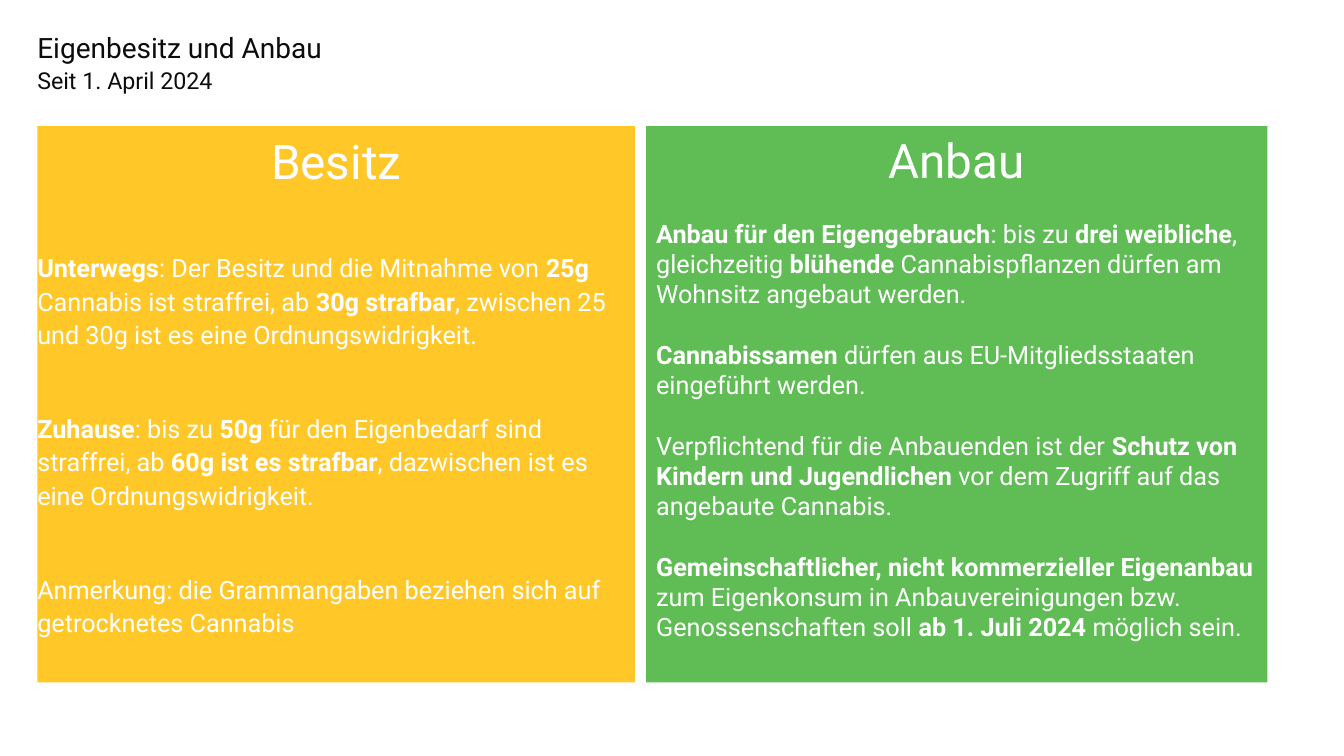
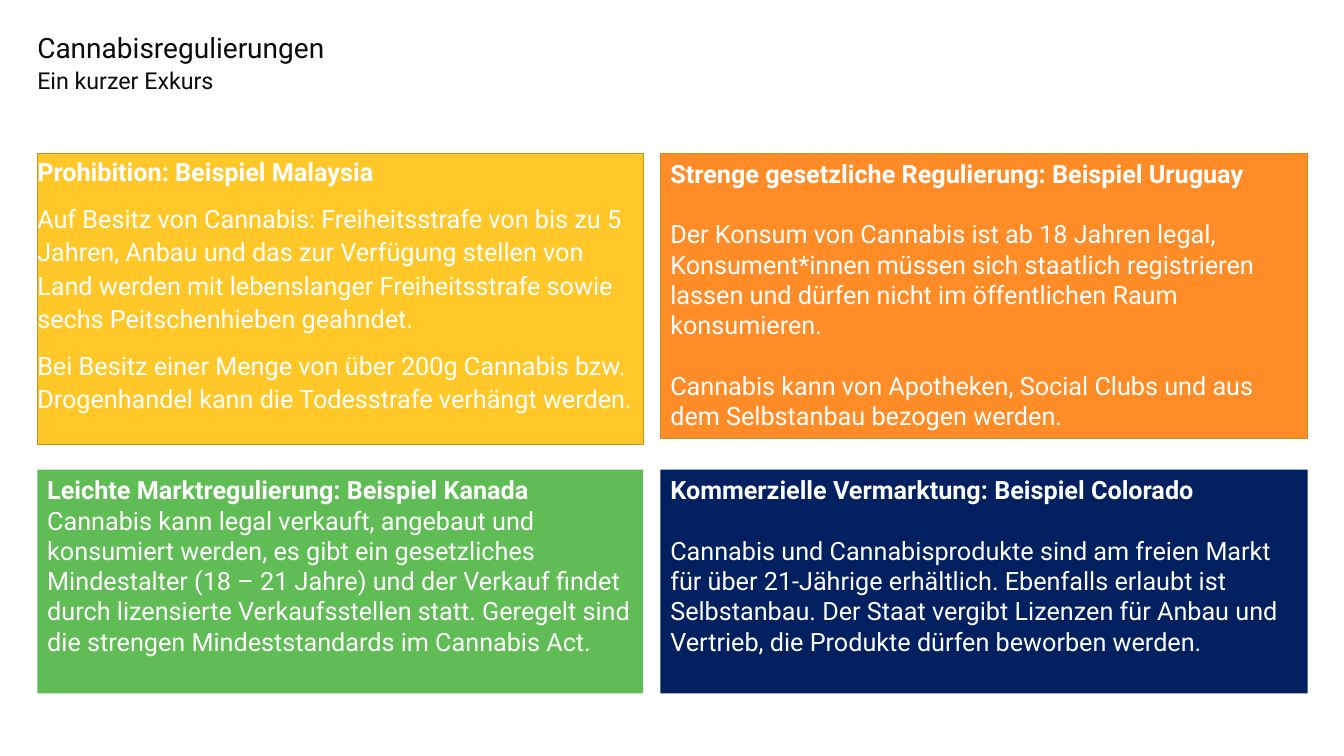
from pptx import Presentation
from pptx.dml.color import RGBColor
from pptx.enum import shapes, text
from pptx.util import Inches, Pt

FONT = "Roboto"
INK, WHITE, EDGE = "0C0C0C", "FFFFFF", "BD941E"
YELLOW, GREEN, ORANGE, NAVY = "FFC828", "60BD55", "FF8C27", "002060"
LEFT, WIDE = 0.37, 12.6

# Text styles: insets, line spacing and alignment
LOOSE = {"side": 0, "top": 0, "lead": 1.1}
PLAIN = {"side": 0.1, "top": 0.05, "lead": 1.0}
BIG = {"size": 34, "bold": False, "align": text.PP_ALIGN.CENTER}
SMALL = {"size": 18, "bold": True, "align": text.PP_ALIGN.LEFT}
LINE = 21.6  # space of one text line, in points

# Bold passages stand between bars.
SLIDES = [
    {
        "title": "Eigenbesitz und Anbau",
        "sub": "Seit 1. April 2024",
        "cards": [
            {"box": (LEFT, 1.25, 5.93, 5.52), "fill": YELLOW, "style": LOOSE,
             "head": "Besitz", "look": BIG, "gap": 43.5, "body": [
                 "|Unterwegs|: Der Besitz und die Mitnahme von |25g |Cannabis ist "
                 "straffrei, ab |30g strafbar|, zwischen 25 und 30g ist es eine "
                 "Ordnungswidrigkeit.",
                 "|Zuhause|: bis zu |50g| für den Eigenbedarf sind straffrei, ab "
                 "|60g ist es strafbar|, dazwischen ist es eine Ordnungswidrigkeit.",
                 "Anmerkung: die Grammangaben beziehen sich auf getrocknetes Cannabis"]},
            {"box": (6.41, 1.25, 6.16, 5.52), "fill": GREEN, "style": PLAIN,
             "head": "Anbau", "look": BIG, "gap": LINE, "body": [
                 "|Anbau für den Eigengebrauch|: bis zu |drei weibliche|, gleichzeitig "
                 "|blühende| Cannabispflanzen dürfen am Wohnsitz angebaut werden.",
                 "|Cannabissamen| dürfen aus EU-Mitgliedsstaaten eingeführt werden.",
                 "Verpflichtend für die Anbauenden ist der |Schutz von Kindern und "
                 "Jugendlichen |vor dem Zugriff auf das angebaute Cannabis.",
                 "|Gemeinschaftlicher, nicht kommerzieller Eigenanbau |zum Eigenkonsum "
                 "in Anbauvereinigungen bzw. Genossenschaften soll |ab 1. Juli 2024| "
                 "möglich sein."]},
        ],
    },
    {
        "title": "Cannabisregulierungen",
        "sub": "Ein kurzer Exkurs",
        "cards": [
            {"box": (LEFT, 1.52, 6.01, 2.89), "fill": YELLOW, "edge": EDGE,
             "style": LOOSE, "head": "Prohibition: Beispiel Malaysia",
             "look": SMALL, "gap": 10, "body": [
                 "Auf Besitz von Cannabis: Freiheitsstrafe von bis zu 5 Jahren, Anbau "
                 "und das zur Verfügung stellen von Land werden mit lebenslanger "
                 "Freiheitsstrafe sowie sechs Peitschenhieben geahndet.",
                 "Bei Besitz einer Menge von über 200g Cannabis bzw. Drogenhandel kann "
                 "die Todesstrafe verhängt werden."]},
            {"box": (6.55, 1.52, 6.42, 2.83), "fill": ORANGE, "edge": EDGE,
             "style": PLAIN, "head": "Strenge gesetzliche Regulierung: Beispiel Uruguay",
             "look": SMALL, "gap": LINE, "body": [
                 "Der Konsum von Cannabis ist ab 18 Jahren legal, Konsument*innen "
                 "müssen sich staatlich registrieren lassen und dürfen nicht im "
                 "öffentlichen Raum konsumieren.",
                 "Cannabis kann von Apotheken, Social Clubs und aus dem Selbstanbau "
                 "bezogen werden."]},
            {"box": (LEFT, 4.66, 6.01, 2.22), "fill": GREEN, "style": PLAIN,
             "head": "Leichte Marktregulierung: Beispiel Kanada",
             "look": SMALL, "gap": 0, "body": [
                 "Cannabis kann legal verkauft, angebaut und konsumiert werden, es gibt "
                 "ein gesetzliches Mindestalter (18 – 21 Jahre) und der Verkauf findet "
                 "durch lizensierte Verkaufsstellen statt. Geregelt sind die strengen "
                 "Mindeststandards im Cannabis Act."]},
            {"box": (6.55, 4.66, 6.42, 2.22), "fill": NAVY, "style": PLAIN,
             "head": "Kommerzielle Vermarktung: Beispiel Colorado",
             "look": SMALL, "gap": LINE, "body": [
                 "Cannabis und Cannabisprodukte sind am freien Markt für über "
                 "21-Jährige erhältlich. Ebenfalls erlaubt ist Selbstanbau. Der Staat "
                 "vergibt Lizenzen für Anbau und Vertrieb, die Produkte dürfen "
                 "beworben werden."]},
        ],
    },
]


def rgb(code):
    return RGBColor.from_string(code)


def set_all(item, values):
    for name, value in values.items():
        setattr(item, name, value)


def set_frame(frame, side, top, anchor):
    set_all(frame, {
        "word_wrap": True, "vertical_anchor": anchor,
        "margin_left": Inches(side), "margin_right": Inches(side),
        "margin_top": Inches(top), "margin_bottom": Inches(top)})


def write(para, words, size, color, bold=False):
    """Add runs to a paragraph; bars in the words switch bold on and off."""
    for i, part in enumerate(words.split("|")):
        if part:
            run = para.add_run()
            run.text = part
            set_all(run.font, {"name": FONT, "size": Pt(size),
                               "bold": bold or i % 2 == 1})
            run.font.color.rgb = rgb(color)


def add_line(slide, words, top, size):
    box = slide.shapes.add_textbox(*map(Inches, (LEFT, top, WIDE, 0.26)))
    set_frame(box.text_frame, 0, 0, text.MSO_ANCHOR.MIDDLE)
    para = box.text_frame.paragraphs[0]
    para.line_spacing = 0.9
    write(para, words, size, INK)


def add_card(slide, card):
    shape = slide.shapes.add_shape(shapes.MSO_SHAPE.RECTANGLE,
                                   *map(Inches, card["box"]))
    shape.shadow.inherit = False
    shape.fill.solid()
    shape.fill.fore_color.rgb = rgb(card["fill"])
    if "edge" in card:
        shape.line.color.rgb = rgb(card["edge"])
        shape.line.width = Pt(0.5)
    else:
        shape.line.fill.background()

    style, look = card["style"], card["look"]
    frame = shape.text_frame
    set_frame(frame, style["side"], style["top"], text.MSO_ANCHOR.TOP)
    head = frame.paragraphs[0]
    set_all(head, {"alignment": look["align"], "line_spacing": style["lead"]})
    write(head, card["head"], look["size"], WHITE, look["bold"])
    for words in card["body"]:
        para = frame.add_paragraph()
        set_all(para, {"alignment": text.PP_ALIGN.LEFT,
                       "line_spacing": style["lead"],
                       "space_before": Pt(card["gap"])})
        write(para, words, 18, WHITE)


def main():
    deck = Presentation()
    set_all(deck, {"slide_width": Inches(13.33), "slide_height": Inches(7.5)})
    for page in SLIDES:
        slide = deck.slides.add_slide(deck.slide_layouts[6])
        add_line(slide, page["title"], 0.36, 20)
        add_line(slide, page["sub"], 0.68, 16.6)
        for card in page["cards"]:
            add_card(slide, card)
    deck.save("out.pptx")


if __name__ == "__main__":
    main()
